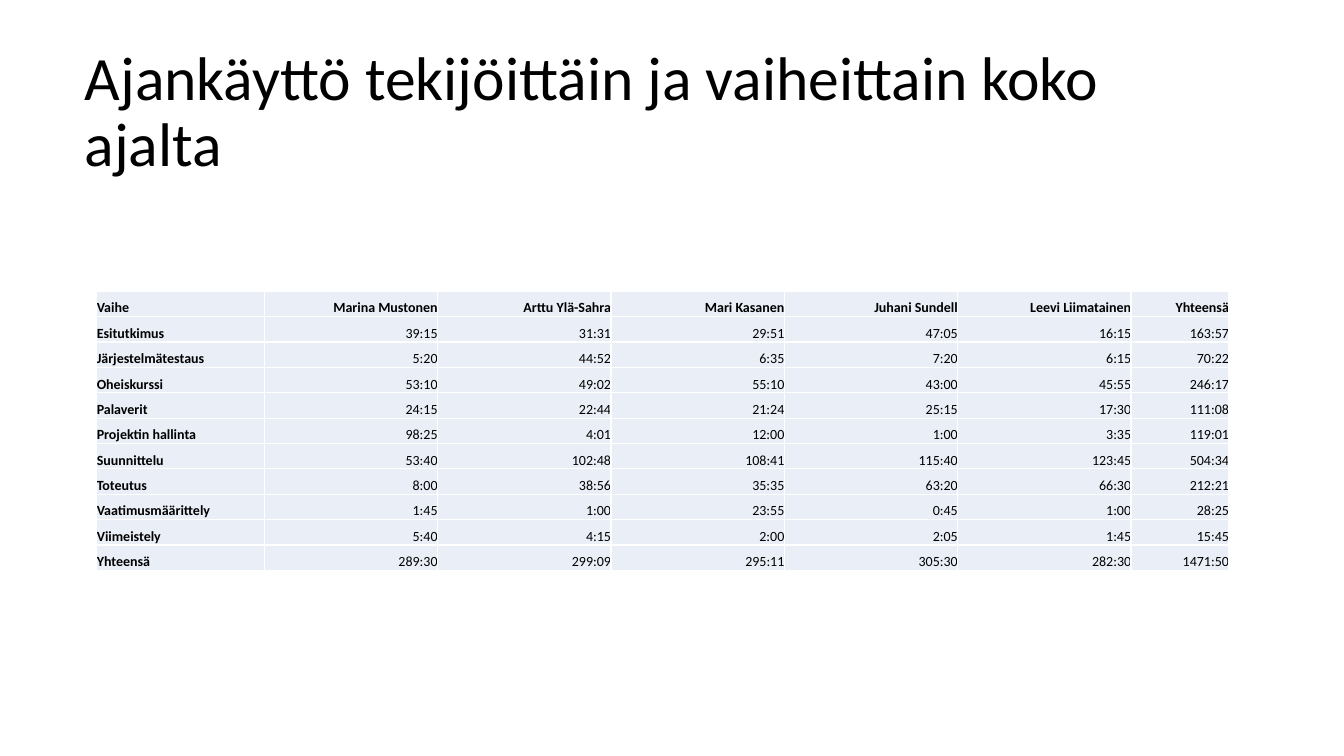
from lxml import etree
from pptx import Presentation
from pptx.dml.color import RGBColor
from pptx.enum.text import MSO_ANCHOR, MSO_AUTO_SIZE, PP_ALIGN
from pptx.oxml.ns import qn
from pptx.util import Inches, Pt

LEFT, RIGHT = PP_ALIGN.LEFT, PP_ALIGN.RIGHT
MIDDLE, BOTTOM = MSO_ANCHOR.MIDDLE, MSO_ANCHOR.BOTTOM
NO_AUTOFIT = MSO_AUTO_SIZE.NONE

COLORS = {"text": "000000", "cell": "EAEFF7", "border": "FFFFFF"}
COLUMN_WIDTHS = [1.66] + [1.72] * 5 + [0.97]
TABLE_HEIGHT = 2.77
HOURS = [
    ["Vaihe", "Marina Mustonen", "Arttu Ylä-Sahra", "Mari Kasanen",
     "Juhani Sundell", "Leevi Liimatainen", "Yhteensä"],
    ["Esitutkimus", "39:15", "31:31", "29:51", "47:05", "16:15", "163:57"],
    ["Järjestelmätestaus", "5:20", "44:52", "6:35", "7:20", "6:15", "70:22"],
    ["Oheiskurssi", "53:10", "49:02", "55:10", "43:00", "45:55", "246:17"],
    ["Palaverit", "24:15", "22:44", "21:24", "25:15", "17:30", "111:08"],
    ["Projektin hallinta", "98:25", "4:01", "12:00", "1:00", "3:35", "119:01"],
    ["Suunnittelu", "53:40", "102:48", "108:41", "115:40", "123:45", "504:34"],
    ["Toteutus", "8:00", "38:56", "35:35", "63:20", "66:30", "212:21"],
    ["Vaatimusmäärittely", "1:45", "1:00", "23:55", "0:45", "1:00", "28:25"],
    ["Viimeistely", "5:40", "4:15", "2:00", "2:05", "1:45", "15:45"],
    ["Yhteensä", "289:30", "299:09", "295:11", "305:30", "282:30", "1471:50"],
]


class SlideBuilder:
    """Holds the text style and the current slide."""

    def __init__(self, slide, font_name):
        self.slide = slide
        self.font_name = font_name

    def add_run(self, paragraph, text, size, bold, alignment):
        paragraph.alignment = alignment
        run = paragraph.add_run()
        run.text = text
        run.font.name = self.font_name
        run.font.size = Pt(size)
        run.font.bold = bold
        run.font.color.rgb = RGBColor.from_string(COLORS["text"])

    def add_title(self, text, left, top, width, height):
        title = self.slide.shapes.title
        title.left, title.top = Inches(left), Inches(top)
        title.width, title.height = Inches(width), Inches(height)
        frame = title.text_frame
        frame.word_wrap = True
        frame.auto_size = NO_AUTOFIT
        frame.vertical_anchor = MIDDLE
        paragraph = frame.paragraphs[0]
        paragraph.line_spacing = 0.9
        self.add_run(paragraph, text, 44, False, LEFT)

    def add_borders(self, cell):
        properties = cell._tc.get_or_add_tcPr()
        for position, side in enumerate(("a:lnL", "a:lnR", "a:lnT", "a:lnB")):
            line = etree.Element(qn(side), w=str(Pt(1)))
            fill = etree.SubElement(line, qn("a:solidFill"))
            etree.SubElement(fill, qn("a:srgbClr"), val=COLORS["border"])
            properties.insert(position, line)

    def add_cell(self, cell, text, bold, alignment):
        cell.margin_left = cell.margin_right = 0
        cell.margin_top = cell.margin_bottom = 0
        cell.vertical_anchor = BOTTOM
        cell.fill.solid()
        cell.fill.fore_color.rgb = RGBColor.from_string(COLORS["cell"])
        self.add_borders(cell)
        self.add_run(cell.text_frame.paragraphs[0], text, 10, bold, alignment)

    def add_table(self, rows, left, top, widths, height):
        table = self.slide.shapes.add_table(
            len(rows), len(widths), Inches(left), Inches(top),
            Inches(sum(widths)), Inches(height)).table
        for column, width in zip(table.columns, widths):
            column.width = Inches(width)
        for row_index, row in enumerate(rows):
            table.rows[row_index].height = Inches(height / len(rows))
            for column_index, text in enumerate(row):
                self.add_cell(table.cell(row_index, column_index), text,
                              row_index == 0 or column_index == 0,
                              RIGHT if column_index else LEFT)


def main():
    presentation = Presentation()
    presentation.slide_width = Inches(13.33)
    presentation.slide_height = Inches(7.5)
    slide = presentation.slides.add_slide(presentation.slide_layouts[5])
    builder = SlideBuilder(slide, "Calibri")
    builder.add_title("Ajankäyttö tekijöittäin ja vaiheittain koko ajalta",
                      0.74, 0.4, 11.73, 1.45)
    builder.add_table(HOURS, 0.96, 2.89, COLUMN_WIDTHS, TABLE_HEIGHT)
    presentation.save("out.pptx")


if __name__ == "__main__":
    main()
